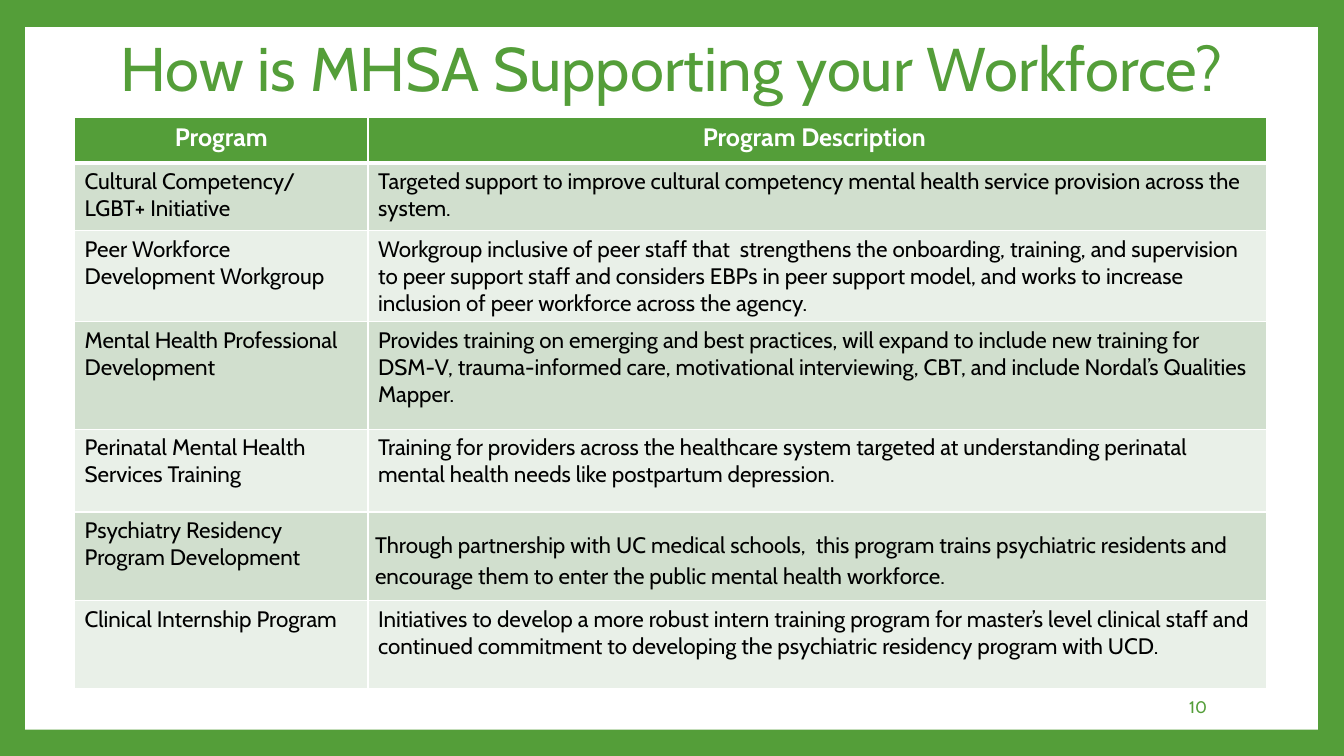
from dataclasses import dataclass, field

from lxml import etree
from pptx import Presentation
from pptx.dml.color import RGBColor
from pptx.enum.shapes import MSO_SHAPE
from pptx.enum.text import MSO_ANCHOR, PP_ALIGN
from pptx.oxml.ns import qn
from pptx.util import Emu, Pt

PX = 9144  # one px is a hundredth of an inch
LEFT, CENTER, RIGHT = PP_ALIGN.LEFT, PP_ALIGN.CENTER, PP_ALIGN.RIGHT
TOP, MIDDLE = MSO_ANCHOR.TOP, MSO_ANCHOR.MIDDLE
RECTANGLE = MSO_SHAPE.RECTANGLE

FONT = "Cabin"
GREEN, WHITE, BLACK = "549E39", "FFFFFF", "000000"
BANDS = ("D1DFCE", "E9F0E8")
COLUMN_WIDTHS = (291, 891)
HEADER_HEIGHT = 46


@dataclass
class Style:
    size: int
    color: str
    align: PP_ALIGN = LEFT
    bold: bool = False
    paragraph: dict = field(default_factory=dict)


@dataclass
class Program:
    name: str
    description: str
    height: int
    style: Style
    cell_format: dict = field(default_factory=dict)


def px(length: int) -> Emu:
    return Emu(length * PX)


def rgb(color: str) -> RGBColor:
    return RGBColor.from_string(color)


def set_attributes(target, values: dict) -> None:
    for name, value in values.items():
        setattr(target, name, value)


def write(frame, text: str, style: Style) -> None:
    frame.word_wrap = True
    paragraph = frame.paragraphs[0]
    set_attributes(paragraph, {"alignment": style.align, **style.paragraph})
    run = paragraph.add_run()
    run.text = text
    set_attributes(run.font, {"name": FONT, "size": Pt(style.size), "bold": style.bold})
    run.font.color.rgb = rgb(style.color)


def add_label(slide, box: tuple[int, int, int, int], text: str, style: Style) -> None:
    frame = slide.shapes.add_textbox(*map(px, box)).text_frame
    frame.vertical_anchor = MIDDLE
    write(frame, text, style)


def add_borders(cell, top: int, bottom: int) -> None:
    properties = cell._tc.get_or_add_tcPr()
    widths = {"a:lnL": 1, "a:lnR": 1, "a:lnT": top, "a:lnB": bottom}
    for index, (tag, width) in enumerate(widths.items()):
        line = etree.Element(qn(tag), w=str(Pt(width)))
        solid = etree.SubElement(line, qn("a:solidFill"))
        etree.SubElement(solid, qn("a:srgbClr"), val=WHITE)
        properties.insert(index, line)


def fill_cell(cell, text: str, style: Style, fill: str, top: int, bottom: int) -> None:
    cell.vertical_anchor = TOP
    cell.fill.solid()
    cell.fill.fore_color.rgb = rgb(fill)
    add_borders(cell, top, bottom)
    write(cell.text_frame, text, style)


TITLE = Style(44, GREEN, CENTER, paragraph={"line_spacing": 0.9})
PAGE_NUMBER = Style(12, GREEN, RIGHT)
HEADER = Style(18, WHITE, CENTER, bold=True)
BODY = Style(16, BLACK)
SPACED_BODY = Style(16, BLACK, paragraph={"line_spacing": 1.15, "space_after": Pt(4)})
SPACED_CELL = {
    "vertical_anchor": MIDDLE,
    "margin_left": px(7),
    "margin_right": px(7),
    "margin_top": px(6),
    "margin_bottom": px(0),
}

PROGRAMS = (
    Program(
        "Cultural Competency/ LGBT+ Initiative",
        "Targeted support to improve cultural competency mental health service "
        "provision across the system.",
        67, BODY,
    ),
    Program(
        "Peer Workforce Development Workgroup",
        "Workgroup inclusive of peer staff that  strengthens the onboarding, training, "
        "and supervision to peer support staff and considers EBPs in peer support model, "
        "and works to increase inclusion of peer workforce across the agency.",
        87, BODY,
    ),
    Program(
        "Mental Health Professional Development",
        "Provides training on emerging and best practices, will expand to include new "
        "training for DSM-V, trauma-informed care, motivational interviewing, CBT, and "
        "include Nordal’s Qualities Mapper.",
        107, BODY,
    ),
    Program(
        "Perinatal Mental Health Services Training",
        "Training for providers across the healthcare system targeted at understanding "
        "perinatal mental health needs like postpartum depression.",
        82, BODY,
    ),
    Program(
        "Psychiatry Residency Program Development",
        "Through partnership with UC medical schools,  this program trains psychiatric "
        "residents and encourage them to enter the public mental health workforce.",
        88, SPACED_BODY, SPACED_CELL,
    ),
    Program(
        "Clinical Internship Program",
        "Initiatives to develop a more robust intern training program for master’s level "
        "clinical staff and continued commitment to developing the psychiatric residency "
        "program with UCD.",
        87, BODY,
    ),
)


def add_program_table(slide) -> None:
    heights = [HEADER_HEIGHT] + [program.height for program in PROGRAMS]
    table = slide.shapes.add_table(
        len(heights), len(COLUMN_WIDTHS),
        px(74), px(116), px(sum(COLUMN_WIDTHS)), px(sum(heights)),
    ).table
    for column, width in zip(table.columns, COLUMN_WIDTHS):
        column.width = px(width)
    for row, height in zip(table.rows, heights):
        row.height = px(height)

    # Header row
    for column, heading in enumerate(("Program", "Program Description ")):
        fill_cell(table.cell(0, column), heading, HEADER, GREEN, top=1, bottom=3)

    # Program rows in alternating bands
    for index, program in enumerate(PROGRAMS):
        band = BANDS[index % 2]
        top = 3 if index == 0 else 1
        name_cell, description_cell = table.rows[index + 1].cells
        fill_cell(name_cell, program.name, BODY, band, top, bottom=1)
        fill_cell(description_cell, program.description, program.style, band, top, bottom=1)
        set_attributes(description_cell, program.cell_format)


def main() -> None:
    deck = Presentation()
    deck.slide_width, deck.slide_height = px(1333), px(750)
    slide = deck.slides.add_slide(deck.slide_layouts[6])

    # Green frame around a white panel
    slide.background.fill.solid()
    slide.background.fill.fore_color.rgb = rgb(GREEN)
    panel = slide.shapes.add_shape(RECTANGLE, *map(px, (25, 27, 1282, 697)))
    panel.shadow.inherit = False
    panel.fill.solid()
    panel.fill.fore_color.rgb = rgb(WHITE)
    panel.line.fill.background()

    # Title, page number and table
    add_label(slide, (76, 27, 1181, 88), "How is MHSA Supporting your Workforce?", TITLE)
    add_label(slide, (1020, 681, 187, 40), "10", PAGE_NUMBER)
    add_program_table(slide)

    deck.save("out.pptx")


if __name__ == "__main__":
    main()
